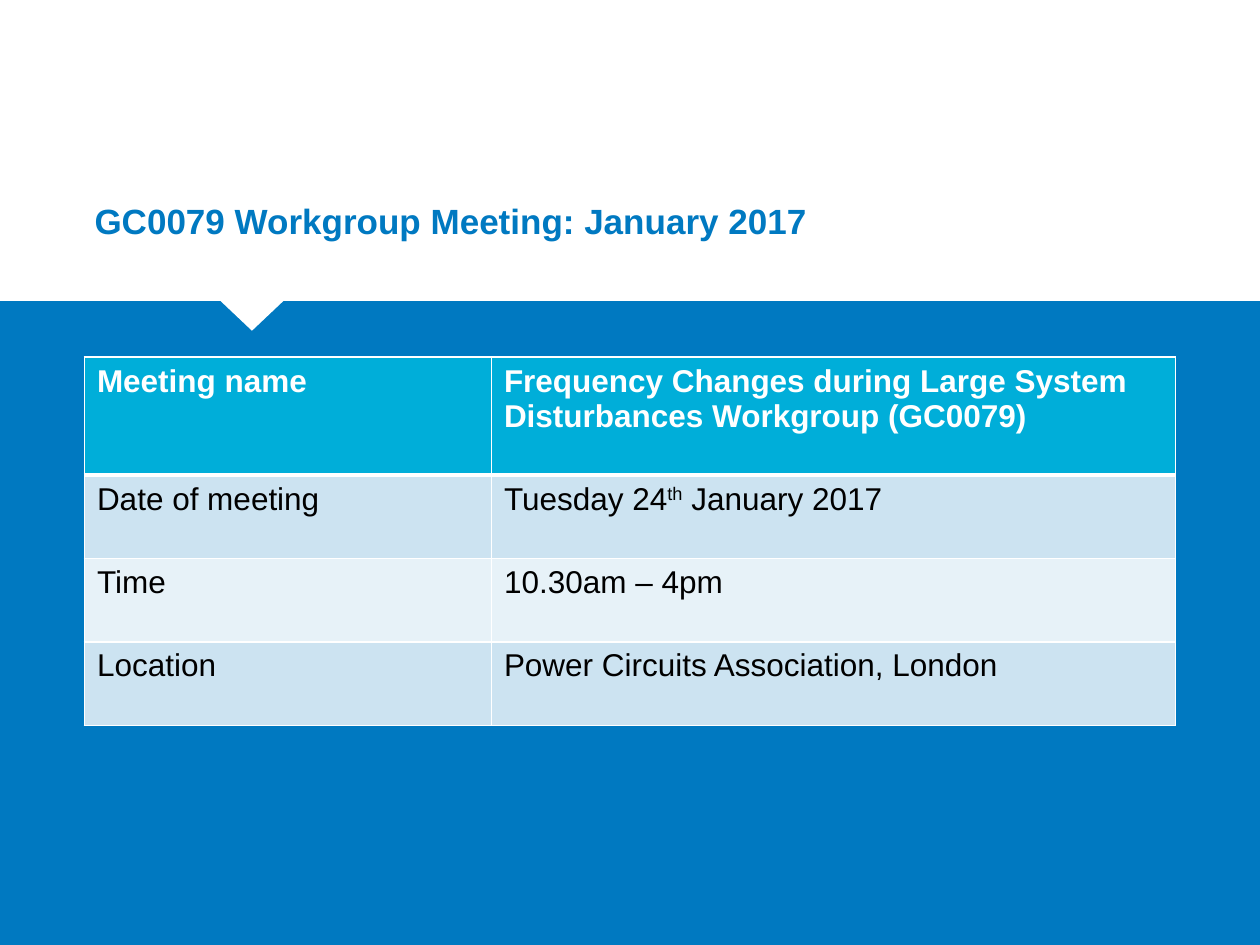
from dataclasses import dataclass

from lxml import etree
from pptx import Presentation
from pptx import util as u
from pptx.dml.color import RGBColor
from pptx.enum import text
from pptx.oxml.ns import qn


@dataclass(frozen=True)
class Theme:
    font: str = "Arial"
    blue: str = "0079C1"
    cyan: str = "00AED9"
    white: str = "FFFFFF"
    black: str = "000000"
    bands: tuple = ("CCE3F1", "E7F2F8")
    title_size: int = 20
    table_size: int = 18


THEME = Theme()
WIDTH, HEIGHT = u.Inches(10), u.Inches(7.5)

# Each row holds cells; each cell is a list of (text, is_superscript) runs
MEETING_ROWS = [
    [[("Meeting name", False)],
     [("Frequency Changes during Large System Disturbances Workgroup (GC0079)", False)]],
    [[("Date of meeting", False)],
     [("Tuesday 24", False), ("th", True), (" January 2017", False)]],
    [[("Time", False)], [("10.30am – 4pm", False)]],
    [[("Location", False)], [("Power Circuits Association, London", False)]],
]


def share_box(left, top, width, height):
    """Turn shares of the slide's size into a box of lengths."""
    return (int(left * WIDTH), int(top * HEIGHT), int(width * WIDTH), int(height * HEIGHT))


def set_fill(target, color):
    target.fill.solid()
    target.fill.fore_color.rgb = RGBColor.from_string(color)


def add_text(paragraph, wording, *, size, color, bold=False, superscript=False):
    run = paragraph.add_run()
    run.text = wording
    run.font.name = THEME.font
    run.font.size = u.Pt(size)
    run.font.bold = bold
    run.font.color.rgb = RGBColor.from_string(color)
    if superscript:
        run.font._element.set("baseline", "30000")


def set_borders(cell, bottom=1, top=1):
    properties = cell._tc.get_or_add_tcPr()
    widths = {"lnL": 1, "lnR": 1, "lnT": top, "lnB": bottom}
    for index, (side, width) in enumerate(widths.items()):
        line = etree.Element(qn(f"a:{side}"), w=str(u.Pt(width)))
        fill = etree.SubElement(line, qn("a:solidFill"))
        etree.SubElement(fill, qn("a:srgbClr"), val=THEME.white)
        properties.insert(index, line)


def add_banner(slide, box):
    """White band whose lower edge has a pointer, placed behind the title."""
    left, top, width, height = box
    edge = top + int(height * 0.91)
    center, half = left + width // 5, width // 40
    builder = slide.shapes.build_freeform(left, top)
    builder.add_line_segments([
        (left, edge), (center - half, edge), (center, top + height),
        (center + half, edge), (left + width, edge), (left + width, top),
    ])
    banner = builder.convert_to_shape()
    banner.shadow.inherit = False
    set_fill(banner, THEME.white)
    banner.line.fill.background()
    slide.shapes.title.element.addprevious(banner.element)


def add_title(slide, box):
    title = slide.shapes.title
    title.left, title.top, title.width, title.height = box
    frame = title.text_frame
    frame.word_wrap = True
    frame.auto_size = text.MSO_AUTO_SIZE.NONE
    frame.vertical_anchor = text.MSO_ANCHOR.MIDDLE
    paragraph = frame.paragraphs[0]
    paragraph.alignment = text.PP_ALIGN.LEFT
    add_text(paragraph, "GC0079 Workgroup Meeting: January 2017",
             size=THEME.title_size, color=THEME.blue, bold=True)


def add_meeting_table(slide, box, column_shares, row_shares):
    _, _, width, height = box
    table = slide.shapes.add_table(len(row_shares), len(column_shares), *box).table
    for column, share in zip(table.columns, column_shares):
        column.width = int(width * share)
    for row, share in zip(table.rows, row_shares):
        row.height = int(height * share)

    for row_index, row in enumerate(MEETING_ROWS):
        header = row_index == 0
        for column_index, runs in enumerate(row):
            cell = table.cell(row_index, column_index)
            set_fill(cell, THEME.cyan if header else THEME.bands[(row_index - 1) % 2])
            set_borders(cell, bottom=3 if header else 1, top=3 if row_index == 1 else 1)
            for wording, superscript in runs:
                add_text(cell.text_frame.paragraphs[0], wording, size=THEME.table_size,
                         color=THEME.white if header else THEME.black,
                         bold=header, superscript=superscript)


def main():
    presentation = Presentation()
    presentation.slide_width, presentation.slide_height = WIDTH, HEIGHT
    slide = presentation.slides.add_slide(presentation.slide_layouts[5])
    set_fill(slide.background, THEME.blue)

    add_banner(slide, share_box(0, 0, 1, 0.35))
    add_title(slide, share_box(0.065, 0.204, 0.88, 0.059))
    add_meeting_table(slide, share_box(0.067, 0.378, 0.866, 0.39),
                      column_shares=(0.373, 0.627),
                      row_shares=(0.32, 0.226, 0.227, 0.227))
    presentation.save("out.pptx")


if __name__ == "__main__":
    main()
